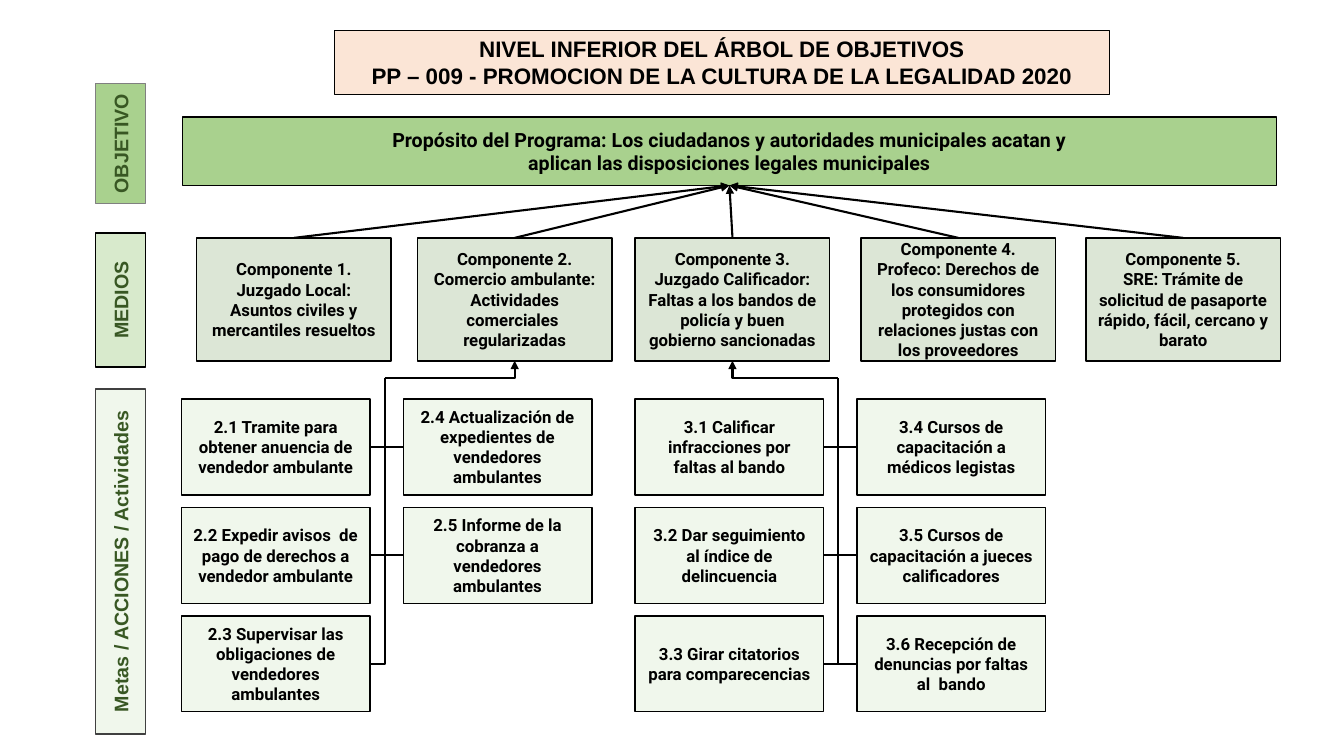
from lxml import etree
from pptx import Presentation
from pptx.dml.color import RGBColor
from pptx.enum.shapes import MSO_CONNECTOR, MSO_SHAPE
from pptx.enum.text import MSO_ANCHOR, PP_ALIGN
from pptx.oxml.ns import qn
from pptx.util import Inches, Pt

STRAIGHT, ELBOW = MSO_CONNECTOR.STRAIGHT, MSO_CONNECTOR.ELBOW
PROCESS, RECT = MSO_SHAPE.FLOWCHART_PROCESS, MSO_SHAPE.RECTANGLE
TOP, MIDDLE = MSO_ANCHOR.TOP, MSO_ANCHOR.MIDDLE
SIDE_TOP, SIDE_BOTTOM = 0, 2

BLACK, DARK_GREEN, GREEN, PALE_GREEN = "000000", "385723", "A9D18E", "C5E0B4"

# Activity grid: two columns per group, three rows
GROUP_LEFTS = (1.8, 6.3)
COL_PITCH, ROW_PITCH = 2.2, 1.075
ROW_TOP, ACT_W, ACT_H = 3.96, 1.87, 0.95
TRUNK_Y = 3.75
COMP_TOP, COMP_W, COMP_H = 2.36, 1.93, 1.22
LABEL_X, LABEL_W = 0.95, 0.49

LABELS = [  # text, top, height, fill, opacity, line colour
    ("OBJETIVO", 0.83, 1.19, GREEN, 100, "808080"),
    ("MEDIOS", 2.31, 1.33, GREEN, 45, BLACK),
    ("Metas / ACCIONES / Actividades", 3.86, 3.42, PALE_GREEN, 25, "404040"),
]
COMPONENTS = [
    (1.95, ["Componente 1. Juzgado Local: Asuntos civiles y mercantiles resueltos"]),
    (4.14, ["Componente 2. Comercio ambulante: Actividades comerciales  regularizadas"]),
    (6.3, ["Componente 3. Juzgado Calificador: Faltas a los bandos de policía y buen "
           "gobierno sancionadas"]),
    (8.54, ["Componente 4. Profeco: Derechos de los consumidores protegidos con "
            "relaciones justas con los proveedores"]),
    (10.77, ["Componente 5.",
             "SRE: Trámite de solicitud de pasaporte rápido, fácil, cercano y barato"]),
]
ACTIVITIES = {  # component index: left column, right column
    1: (["2.1 Tramite para obtener anuencia de vendedor ambulante",
         "2.2 Expedir avisos  de pago de derechos a vendedor ambulante",
         "2.3 Supervisar las obligaciones de vendedores ambulantes"],
        ["2.4 Actualización de expedientes de vendedores ambulantes",
         "2.5 Informe de la cobranza a vendedores ambulantes"]),
    2: (["3.1 Calificar infracciones por faltas al bando",
         "3.2 Dar seguimiento al índice de delincuencia",
         "3.3 Girar citatorios para comparecencias"],
        ["3.4 Cursos de capacitación a médicos legistas",
         "3.5 Cursos de capacitación a jueces calificadores",
         "3.6 Recepción de denuncias por faltas al  bando"]),
}


def rgb(hex_text):
    return RGBColor.from_string(hex_text)


def add_box(s, lines, left, top, width, height, fill, opacity=100, size=12, font="Roboto",
            color=BLACK, line=BLACK, line_width=1, kind=PROCESS, anchor=MIDDLE):
    sp = s.shapes.add_shape(kind, Inches(left), Inches(top), Inches(width), Inches(height))
    sp.shadow.inherit = False
    sp.fill.solid()
    sp.fill.fore_color.rgb = rgb(fill)
    if opacity < 100:
        clr = sp._element.spPr.find(qn("a:solidFill")).find(qn("a:srgbClr"))
        etree.SubElement(clr, qn("a:alpha"), val=str(opacity * 1000))
    sp.line.color.rgb = rgb(line)
    sp.line.width = Pt(line_width)
    tf = sp.text_frame
    tf.word_wrap = True
    tf.vertical_anchor = anchor
    tf.text = "\n".join(lines)
    for p in tf.paragraphs:
        p.alignment = PP_ALIGN.CENTER
        p.font.name, p.font.size, p.font.bold = font, Pt(size), True
        p.font.color.rgb = rgb(color)
    return sp


def add_label(s, text, top, height, fill, opacity, line):
    """Add a level label that reads upwards; top and height are as seen after turning."""
    left = LABEL_X + (LABEL_W - height) / 2
    sp = add_box(s, [text], left, top + (height - LABEL_W) / 2, height, LABEL_W, fill,
                 opacity, 14, "Arial", DARK_GREEN, line)
    sp.rotation = 270


def add_link(s, kind, start, end, arrow=False):
    """Join two points; an elbow runs horizontally first, then vertically."""
    cx = s.shapes.add_connector(kind, *(Inches(v) for v in start + end))
    cx.line.color.rgb = rgb(BLACK)
    cx.line.width = Pt(1.5)
    spPr = cx._element.spPr
    if kind == ELBOW:
        spPr.find(qn("a:prstGeom")).set("prst", "bentConnector2")
    if arrow:
        etree.SubElement(spPr.find(qn("a:ln")), qn("a:tailEnd"), type="triangle")
    etree.SubElement(spPr, qn("a:effectLst"))
    return cx


def add_activities(s, left, columns, component_x):
    """Add a group of activities whose branches meet in a trunk under its component."""
    trunk_x = left + (ACT_W + COL_PITCH) / 2 - 0.02
    for col, texts in enumerate(columns):
        x = left + col * COL_PITCH
        edge = x if col else x + ACT_W
        for row, text in enumerate(texts):
            y = ROW_TOP + row * ROW_PITCH
            add_box(s, [text], x, y, ACT_W, ACT_H, PALE_GREEN, 25)
            add_link(s, ELBOW, (edge, y + ACT_H / 2), (trunk_x, TRUNK_Y))
    add_link(s, ELBOW, (trunk_x, TRUNK_Y), (component_x, COMP_TOP + COMP_H), arrow=True)


def main():
    prs = Presentation()
    prs.slide_width, prs.slide_height = Inches(13.33), Inches(7.5)
    s = prs.slides.add_slide(prs.slide_layouts[6])

    add_box(s, ["NIVEL INFERIOR DEL ÁRBOL DE OBJETIVOS",
                "PP – 009 - PROMOCION DE LA CULTURA DE LA LEGALIDAD 2020"],
            3.32, 0.3, 7.68, 0.64, "FBE5D6", size=16, font="Arial", line_width=0.75,
            kind=RECT, anchor=TOP)
    for label in LABELS:
        add_label(s, *label)
    purpose = add_box(s, ["Propósito del Programa: Los ciudadanos y autoridades municipales acatan y",
                          "aplican las disposiciones legales municipales"],
                      1.81, 1.16, 10.85, 0.68, GREEN, size=14)

    for left, lines in COMPONENTS:
        component = add_box(s, lines, left, COMP_TOP, COMP_W, COMP_H, "548235", 20)
        cx = add_link(s, STRAIGHT, (left, COMP_TOP), (left, COMP_TOP), arrow=True)
        cx.begin_connect(component, SIDE_TOP)
        cx.end_connect(purpose, SIDE_BOTTOM)

    for left, (index, columns) in zip(GROUP_LEFTS, ACTIVITIES.items()):
        add_activities(s, left, columns, COMPONENTS[index][0] + COMP_W / 2)

    prs.save("out.pptx")


if __name__ == "__main__":
    main()
